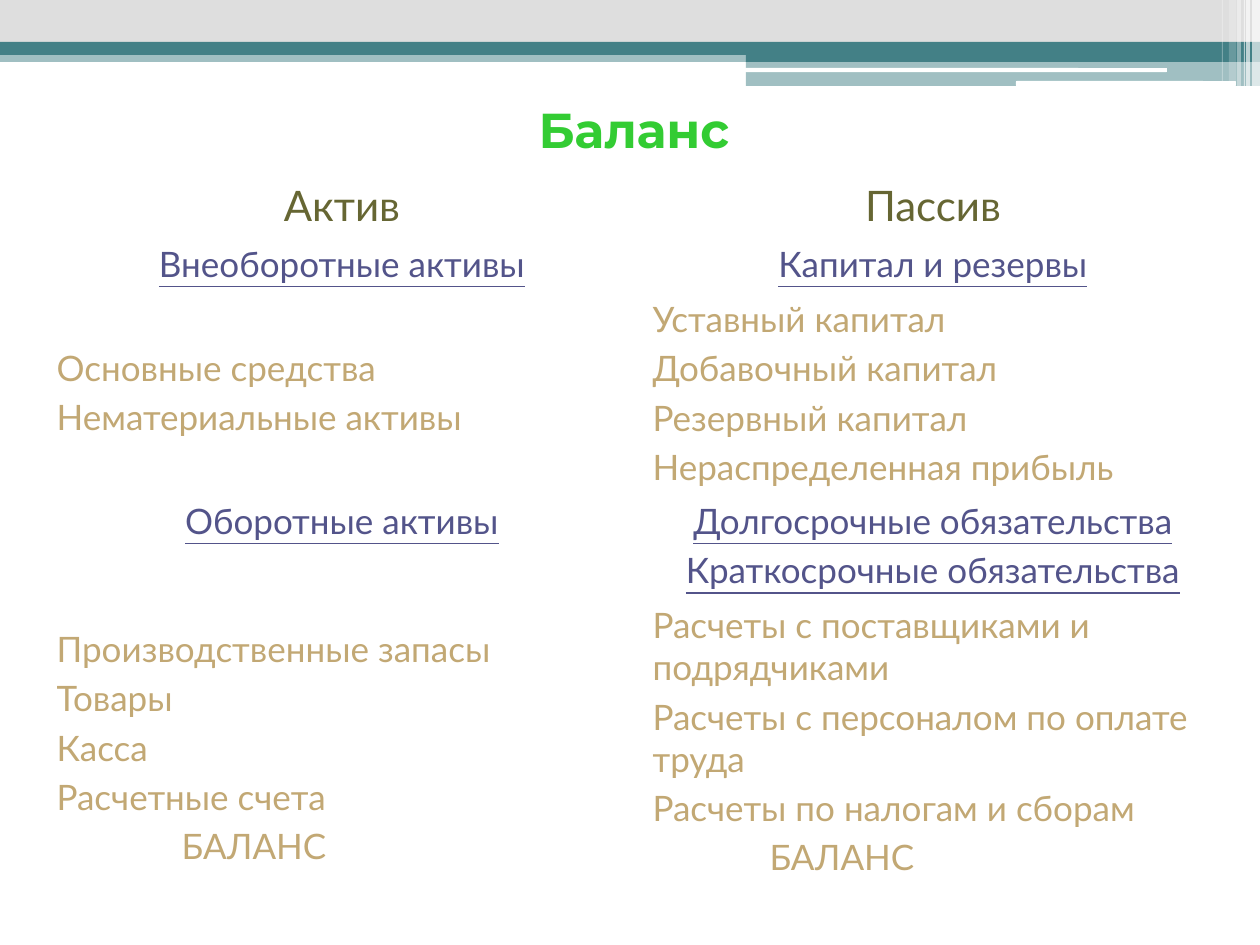
from dataclasses import dataclass

from lxml.etree import SubElement
from pptx import Presentation
from pptx.dml.color import RGBColor
from pptx.enum.shapes import MSO_SHAPE
from pptx.enum.text import MSO_ANCHOR, PP_ALIGN
from pptx.oxml.ns import qn
from pptx.util import Pt


@dataclass(frozen=True)
class Theme:
    background: str = "FFFFFF"
    silver: str = "DEDEDE"
    teal: str = "438086"
    green: str = "33CC33"
    olive: str = "666633"
    violet: str = "53548A"
    sand: str = "C2A874"
    title_font: str = "Montserrat"
    body_font: str = "Lato"
    title_size: int = 28
    side_size: int = 24
    text_size: int = 20
    paragraph_gap: int = 4


THEME = Theme()


@dataclass(frozen=True)
class Band:
    left: int
    top: int
    width: int
    height: int
    color: str
    opacity: int = 100
    outline: MSO_SHAPE = MSO_SHAPE.RECTANGLE


@dataclass(frozen=True)
class Entry:
    lines: tuple[str, ...]
    drop: int = 0
    total_indent: int = 0


@dataclass(frozen=True)
class BalanceRow:
    height: int
    assets: Entry
    liabilities: Entry
    color: str
    size: int = THEME.text_size
    heading: bool = True


ROUND = MSO_SHAPE.ROUNDED_RECTANGLE
BANDS = (
    Band(0, 50, 1260, 12, THEME.teal, 50),
    Band(0, 0, 1260, 43, THEME.silver),
    Band(0, 42, 1260, 13, THEME.teal),
    Band(746, 49, 514, 13, THEME.teal),
    Band(746, 61, 514, 25, THEME.teal, 50),
    Band(745, 68, 422, 4, THEME.background, outline=ROUND),
    Band(1016, 81, 220, 5, THEME.background, outline=ROUND),
    Band(1252, 0, 8, 86, THEME.background, 65),
    Band(1246, 0, 4, 86, THEME.background, 65),
    Band(1244, 0, 1, 86, THEME.background, 60),
    Band(1237, 0, 4, 86, THEME.background, 40),
    Band(1229, 0, 7, 81, THEME.background, 20),
    Band(1222, 0, 1, 81, THEME.background, 30),
)

TOTAL = "БАЛАНС"
BALANCE = (
    BalanceRow(63, Entry(("Актив",)), Entry(("Пассив",)), THEME.olive, THEME.side_size),
    BalanceRow(55, Entry(("Внеоборотные активы",)), Entry(("Капитал и резервы",)), THEME.violet),
    BalanceRow(
        202,
        Entry(("Основные средства", "Нематериальные активы"), drop=49),
        Entry(("Уставный капитал", "Добавочный капитал", "Резервный капитал",
               "Нераспределенная прибыль")),
        THEME.sand, heading=False,
    ),
    BalanceRow(
        104,
        Entry(("Оборотные активы",)),
        Entry(("Долгосрочные обязательства", "Краткосрочные обязательства")),
        THEME.violet,
    ),
    BalanceRow(
        340,
        Entry(("Производственные запасы", "Товары", "Касса", "Расчетные счета", TOTAL),
              drop=24, total_indent=125),
        Entry(("Расчеты с поставщиками и подрядчиками", "Расчеты с персоналом по оплате труда",
               "Расчеты по налогам и сборам", TOTAL), total_indent=117),
        THEME.sand, heading=False,
    ),
)
COLUMN_WIDTHS = (596, 586)
TABLE_LEFT, TABLE_TOP = 44, 174
CELL_MARGIN = 6


def px(length: int) -> int:
    return round(length * 914400 / 126)


def draw_band(slide, band: Band) -> None:
    stripe = slide.shapes.add_shape(
        band.outline, px(band.left), px(band.top), px(band.width), px(band.height))
    stripe.shadow.inherit = False
    stripe.line.fill.background()
    stripe.fill.solid()
    stripe.fill.fore_color.rgb = RGBColor.from_string(band.color)
    if band.opacity < 100:
        color = stripe.fill._xPr.find(qn("a:solidFill"))[0]
        SubElement(color, qn("a:alpha"), val=str(band.opacity * 1000))


def style_font(font, name: str, size: int, color: str) -> None:
    font.name = name
    font.size = Pt(size)
    font.color.rgb = RGBColor.from_string(color)


def fill_entry(cell, entry: Entry, row: BalanceRow) -> None:
    cell.fill.background()
    cell.margin_top = px(CELL_MARGIN + entry.drop)
    cell.margin_bottom = px(CELL_MARGIN)
    frame = cell.text_frame
    for index, line in enumerate(entry.lines):
        paragraph = frame.add_paragraph() if index else frame.paragraphs[0]
        paragraph.text = line
        paragraph.alignment = PP_ALIGN.CENTER if row.heading else PP_ALIGN.LEFT
        paragraph.space_before = Pt(THEME.paragraph_gap if index else 0)
        style_font(paragraph.font, THEME.body_font, row.size, row.color)
        paragraph.font.underline = row.color == THEME.violet
        if line == TOTAL:
            paragraph._p.get_or_add_pPr().set("marL", str(px(entry.total_indent)))


def draw_balance(slide) -> None:
    table = slide.shapes.add_table(
        len(BALANCE), len(COLUMN_WIDTHS), px(TABLE_LEFT), px(TABLE_TOP),
        px(sum(COLUMN_WIDTHS)), px(sum(row.height for row in BALANCE))).table
    table.first_row = False
    table.horz_banding = False
    for column, width in zip(table.columns, COLUMN_WIDTHS):
        column.width = px(width)
    for index, row in enumerate(BALANCE):
        table.rows[index].height = px(row.height)
        for side, entry in enumerate((row.assets, row.liabilities)):
            fill_entry(table.cell(index, side), entry, row)


def write_title(slide) -> None:
    title = slide.shapes.title
    title.left, title.top, title.width, title.height = px(54), px(34), px(1160), px(189)
    title.text_frame.text = "Баланс"
    title.text_frame.vertical_anchor = MSO_ANCHOR.MIDDLE
    heading = title.text_frame.paragraphs[0]
    heading.alignment = PP_ALIGN.CENTER
    style_font(heading.font, THEME.title_font, THEME.title_size, THEME.green)
    heading.font.bold = True


def main() -> None:
    presentation = Presentation()
    presentation.slide_width, presentation.slide_height = px(1260), px(945)
    slide = presentation.slides.add_slide(presentation.slide_layouts[5])
    slide.background.fill.solid()
    slide.background.fill.fore_color.rgb = RGBColor.from_string(THEME.background)
    for band in BANDS:
        draw_band(slide, band)
    write_title(slide)
    draw_balance(slide)
    presentation.save("out.pptx")


if __name__ == "__main__":
    main()
